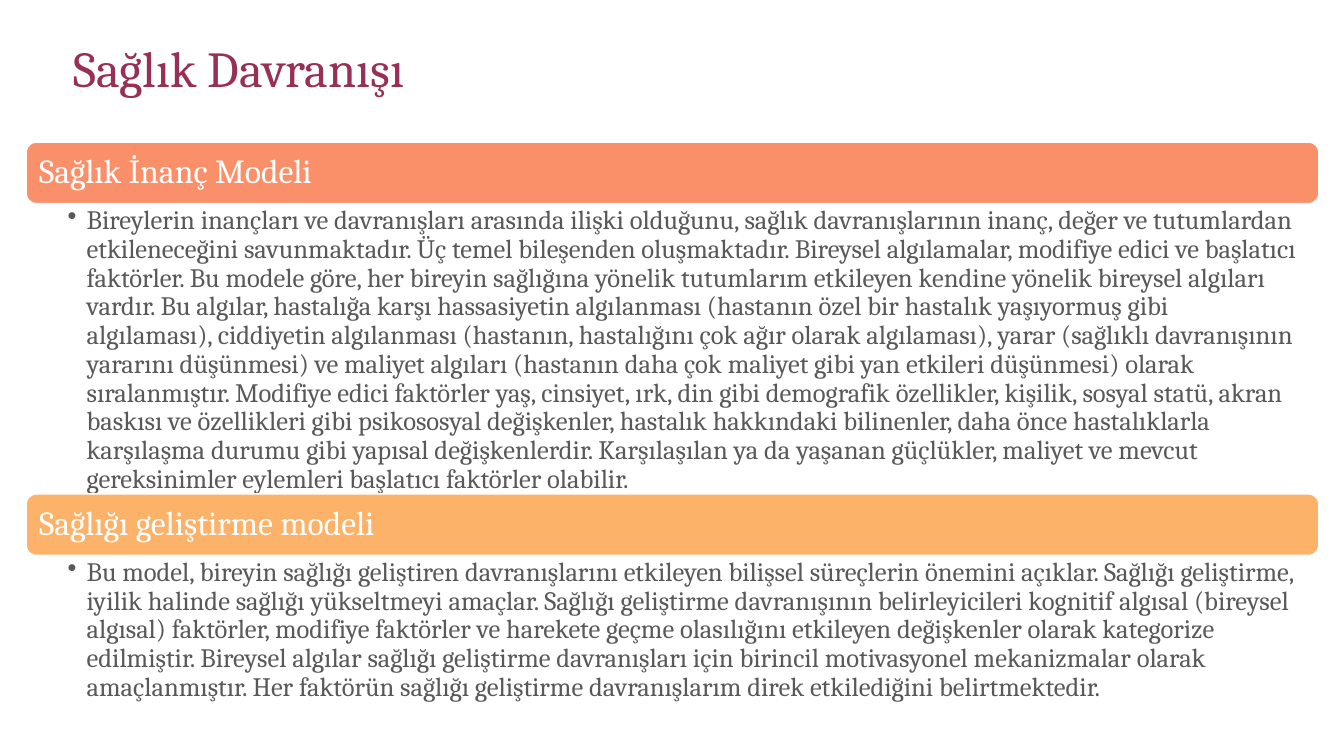
"""Build the slide on two models of health behaviour."""
import pptx
import pptx.dml.color
import pptx.enum.shapes
import pptx.enum.text
import pptx.oxml.ns
import pptx.util
from dataclasses import dataclass
from lxml import etree

Inches = pptx.util.Inches


@dataclass(frozen=True)
class Theme:
    """Colours, font and type sizes."""
    font: str = "Cambria"
    title: str = "972F57"
    body: str = "595959"
    white: str = "FFFFFF"
    coral: str = "FA906A"
    amber: str = "FCB268"
    big: int = 36
    mid: int = 24
    small: int = 19


theme = Theme()


def rgb(code):
    """Turn a hex code into a colour."""
    return pptx.dml.color.RGBColor.from_string(code)


def write(shape, text, size, color, pad, anchor):
    """Put one styled run into a shape and return its paragraph."""
    frame = shape.text_frame
    frame.word_wrap = True
    frame.vertical_anchor = anchor
    frame.margin_left, frame.margin_top, frame.margin_right, frame.margin_bottom = map(Inches, pad)
    para = frame.paragraphs[0]
    para.alignment = pptx.enum.text.PP_ALIGN.LEFT
    para.line_spacing = 0.9
    run = para.add_run()
    run.text = text
    run.font.name = theme.font
    run.font.size = pptx.util.Pt(size)
    run.font.color.rgb = rgb(color)
    return para


deck = pptx.Presentation()
deck.slide_width, deck.slide_height = Inches(13.33), Inches(7.5)
slide = deck.slides.add_slide(deck.slide_layouts[6])
top = pptx.enum.text.MSO_ANCHOR.TOP
middle = pptx.enum.text.MSO_ANCHOR.MIDDLE

title = slide.shapes.add_textbox(Inches(0.63), Inches(0.39), Inches(11), Inches(1.3))
write(title, "Sağlık Davranışı", theme.big, theme.title, (0.1, 0.05, 0.1, 0.05), top)

models = [
    ("Sağlık İnanç Modeli", theme.coral, 2.88, [
        "Bireylerin inançları ve davranışları arasında ilişki olduğunu, sağlık davranışlarının "
        "inanç, değer ve tutumlardan etkileneceğini savunmaktadır.",
        "Üç temel bileşenden oluşmaktadır.",
        "Bireysel algılamalar, modifiye edici ve başlatıcı faktörler.",
        "Bu modele göre, her bireyin sağlığına yönelik tutumlarım etkileyen kendine yönelik "
        "bireysel algıları vardır.",
        "Bu algılar, hastalığa karşı hassasiyetin algılanması (hastanın özel bir hastalık "
        "yaşıyormuş gibi algılaması), ciddiyetin algılanması (hastanın, hastalığını çok ağır "
        "olarak algılaması), yarar (sağlıklı davranışının yararını düşünmesi) ve maliyet algıları "
        "(hastanın daha çok maliyet gibi yan etkileri düşünmesi) olarak sıralanmıştır.",
        "Modifiye edici faktörler yaş, cinsiyet, ırk, din gibi demografik özellikler, kişilik, "
        "sosyal statü, akran baskısı ve özellikleri gibi psikososyal değişkenler, hastalık "
        "hakkındaki bilinenler, daha önce hastalıklarla karşılaşma durumu gibi yapısal "
        "değişkenlerdir.",
        "Karşılaşılan ya da yaşanan güçlükler, maliyet ve mevcut gereksinimler eylemleri "
        "başlatıcı faktörler olabilir.",
    ]),
    ("Sağlığı geliştirme modeli", theme.amber, 1.74, [
        "Bu model, bireyin sağlığı geliştiren davranışlarını etkileyen bilişsel süreçlerin "
        "önemini açıklar.",
        "Sağlığı geliştirme, iyilik halinde sağlığı yükseltmeyi amaçlar.",
        "Sağlığı geliştirme davranışının belirleyicileri kognitif algısal (bireysel algısal) "
        "faktörler, modifiye faktörler ve harekete geçme olasılığını etkileyen değişkenler "
        "olarak kategorize edilmiştir.",
        "Bireysel algılar sağlığı geliştirme davranışları için birincil motivasyonel "
        "mekanizmalar olarak amaçlanmıştır.",
        "Her faktörün sağlığı geliştirme davranışlarım direk etkilediğini belirtmektedir.",
    ]),
]

left, width, bar = Inches(0.26), Inches(12.82), 0.61
y = 1.41
for name, color, height, lines in models:
    head = slide.shapes.add_shape(pptx.enum.shapes.MSO_SHAPE.ROUNDED_RECTANGLE,
                                  left, Inches(y), width, Inches(bar))
    head.shadow.inherit = False
    head.fill.solid()
    head.fill.fore_color.rgb = rgb(color)
    head.line.color.rgb = rgb(theme.white)
    head.line.width = pptx.util.Pt(1)
    write(head, name, theme.mid, theme.white, (0.1, 0.1, 0.1, 0.1), middle)
    y += bar

    body = slide.shapes.add_textbox(left, Inches(y), width, Inches(height))
    para = write(body, " ".join(lines), theme.small, theme.body, (0.41, 0.03, 0.19, 0.03), top)
    props = para._p.get_or_add_pPr()
    props.set("marL", str(Inches(0.19)))
    props.set("indent", str(Inches(-0.19)))
    etree.SubElement(props, pptx.oxml.ns.qn("a:buChar")).set("char", "•")
    y += height

deck.save("out.pptx")
